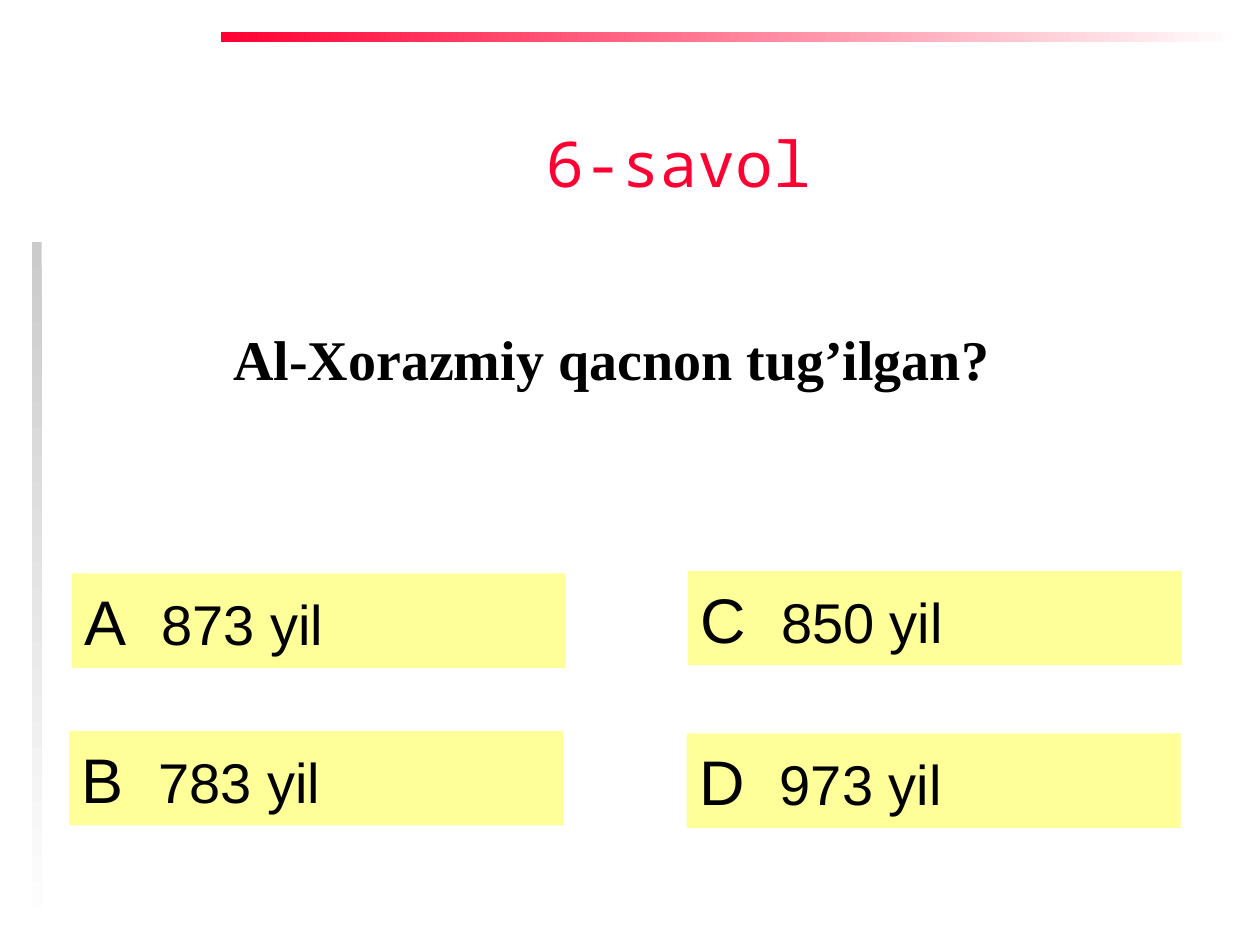
"""Build a quiz slide with one question and four answers."""
from lxml.etree import SubElement as Sub
from pptx import Presentation as Deck
from pptx.dml.color import RGBColor as Color
from pptx.enum.shapes import MSO_SHAPE as Form
from pptx.enum.text import MSO_ANCHOR as Anchor, PP_ALIGN as Align
from pptx.oxml.ns import qn
from pptx.util import Inches, Pt

HUES = {"red": "FF0033", "gray": "CBCBCB", "white": "FFFFFF",
        "yellow": "FFFF99", "black": "000000"}


def hue(name):
    return Color.from_string(HUES[name])


def add_run(para, text, size, font, color="black", bold=False):
    run = para.add_run()
    run.text = text
    run.font.size = Pt(size)
    run.font.name = font
    run.font.bold = bold
    run.font.color.rgb = hue(color)


def add_rect(slide, box):
    rect = slide.shapes.add_shape(Form.RECTANGLE, *map(Inches, box))
    rect.shadow.inherit = False
    rect.line.fill.background()
    return rect


def add_bar(slide, box, color, angle):
    fill = add_rect(slide, box).fill
    fill.gradient()
    fill.gradient_angle = angle
    for stop, name, place in zip(fill.gradient_stops, (color, "white"), (0, 1)):
        stop.color.rgb = hue(name)
        stop.position = place


def add_label(slide, box, text, size, font, color="black", bold=False):
    frame = slide.shapes.add_textbox(*map(Inches, box)).text_frame
    frame.word_wrap = True
    para = frame.paragraphs[0]
    para.alignment = Align.CENTER
    add_run(para, text, size, font, color, bold)


def add_answer(slide, left, top, letter, text, tab):
    rect = add_rect(slide, (left, top, 3.92, 0.75))
    rect.fill.solid()
    rect.fill.fore_color.rgb = hue("yellow")
    frame = rect.text_frame
    frame.word_wrap = True
    frame.vertical_anchor = Anchor.MIDDLE
    para = frame.paragraphs[0]
    para.alignment = Align.LEFT
    tabs = Sub(para._p.get_or_add_pPr(), qn("a:tabLst"))
    Sub(tabs, qn("a:tab"), pos=str(Inches(tab)), algn="l")
    add_run(para, letter + "\t", 36, "Arial")
    add_run(para, text, 32, "Arial")


def main():
    deck = Deck()
    deck.slide_width, deck.slide_height = Inches(10), Inches(7.5)
    slide = deck.slides.add_slide(deck.slide_layouts[6])
    add_bar(slide, (1.75, 0.25, 8.08, 0.08), "red", 0)
    add_bar(slide, (0.25, 1.92, 0.08, 5.5), "gray", 270)
    add_label(slide, (0.84, 2.53, 8.03, 1.57), "Al-Xorazmiy qacnon tug’ilgan?",
              32, "Times New Roman", bold=True)
    answers = [(0.57, 4.55, "А", "873 yil", 0.61),
               (0.55, 5.8, "B", "783 yil", 0.61),
               (5.46, 4.53, "C", "850 yil", 0.64),
               (5.45, 5.82, "D", "973 yil", 0.64)]
    for answer in answers:
        add_answer(slide, *answer)
    add_label(slide, (4.08, 0.94, 2.61, 0.88), "6-savol", 36, "Noto Sans Mono", "red")
    deck.save("out.pptx")


if __name__ == "__main__":
    main()
